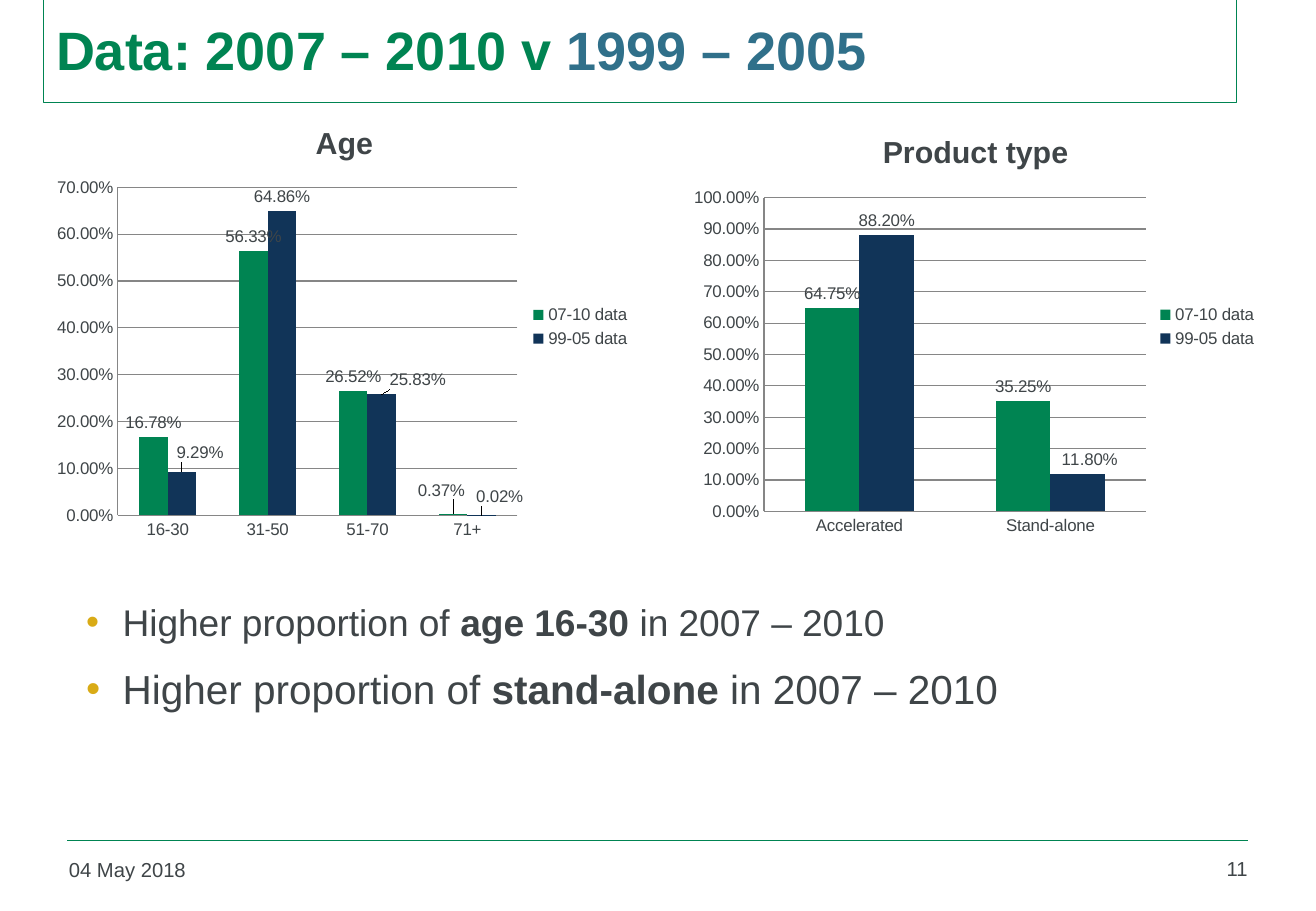
from dataclasses import dataclass

from lxml.etree import SubElement
from pptx import Presentation
from pptx.chart.data import CategoryChartData
from pptx.dml.color import RGBColor
from pptx.enum.chart import XL_CHART_TYPE, XL_LABEL_POSITION, XL_LEGEND_POSITION, XL_TICK_MARK
from pptx.enum.shapes import MSO_CONNECTOR
from pptx.enum.text import MSO_ANCHOR, PP_ALIGN
from pptx.oxml import parse_xml
from pptx.oxml.ns import nsdecls, qn
from pptx.util import Pt


@dataclass(frozen=True)
class Theme:
    face: str = "Arial"
    green: RGBColor = RGBColor(0x00, 0x84, 0x52)
    blue: RGBColor = RGBColor(0x30, 0x70, 0x8A)
    navy: RGBColor = RGBColor(0x11, 0x34, 0x58)
    ink: RGBColor = RGBColor(0x3F, 0x45, 0x48)
    grid: RGBColor = RGBColor(0x86, 0x86, 0x86)
    bullet: str = "D9AB16"
    title: int = 32
    chart_title: int = 18
    chart_text: int = 10
    footer: int = 12


THEME = Theme()
PERCENT = "0.00%"


def set_font(font, size, color, bold=False):
    font.name = THEME.face
    font.size = Pt(size)
    font.color.rgb = color
    font.bold = bold


def manual_layout(**settings):
    """Return a chart layout element, such as x=0.1 or layoutTarget="inner"."""
    children = "".join(f'<c:{tag} val="{value}"/>' for tag, value in settings.items())
    return parse_xml(f'<c:layout {nsdecls("c")}><c:manualLayout>{children}</c:manualLayout></c:layout>')


prs = Presentation()
prs.slide_width, prs.slide_height = Pt(780), Pt(540)
slide = prs.slides.add_slide(prs.slide_layouts[5])
shapes = slide.shapes

# Title
title = shapes.title
title.left, title.top, title.width, title.height = Pt(26), Pt(-2), Pt(707), Pt(62.6)
title.line.color.rgb = THEME.green
title.line.width = Pt(0.75)
title.text_frame.vertical_anchor = MSO_ANCHOR.MIDDLE
heading = title.text_frame.paragraphs[0]
heading.alignment = PP_ALIGN.LEFT
for text, color in (("Data: 2007 – 2010 v", THEME.green), (" 1999 – 2005", THEME.blue)):
    run = heading.add_run()
    run.text = text
    set_font(run.font, THEME.title, color, True)

# Charts: label_shifts maps (series, point) to an offset as a share of the chart size
charts = (
    dict(
        name="Age", box=(27.4, 60.5, 353.5, 266.4), plot=(0.12, 0.19, 0.67, 0.73), top=0.7,
        categories=("16-30", "31-50", "51-70", "71+"),
        recent=(0.1678, 0.5633, 0.2652, 0.0037), earlier=(0.0929, 0.6486, 0.2583, 0.0002),
        label_shifts={(0, 3): (-0.02, -0.02), (1, 0): (0.03, -0.01),
                      (1, 2): (0.06, 0), (1, 3): (0.03, -0.01)},
    ),
    dict(
        name="Product type", box=(404, 66.2, 348.5, 254.9), plot=(0.14, 0.2, 0.65, 0.73), top=1,
        categories=("Accelerated", "Stand-alone"),
        recent=(0.6475, 0.3525), earlier=(0.882, 0.118),
        label_shifts={(1, 1): (0.02, 0)},
    ),
)
for content in charts:
    data = CategoryChartData(number_format=PERCENT)
    data.categories = content["categories"]
    data.add_series("07-10 data", content["recent"])
    data.add_series("99-05 data", content["earlier"])
    chart = shapes.add_chart(XL_CHART_TYPE.COLUMN_CLUSTERED, *map(Pt, content["box"]), data).chart
    set_font(chart.font, THEME.chart_text, THEME.ink)

    chart.has_title = True
    chart.chart_title.include_in_layout = False
    chart_heading = chart.chart_title.text_frame.paragraphs[0]
    chart_heading.text = content["name"]
    set_font(chart_heading.font, THEME.chart_title, THEME.ink, True)
    chart.has_legend = True
    chart.legend.position = XL_LEGEND_POSITION.RIGHT
    chart.legend.include_in_layout = False

    value_axis, category_axis = chart.value_axis, chart.category_axis
    value_axis.minimum_scale, value_axis.maximum_scale = 0, content["top"]
    value_axis.major_unit = 0.1
    value_axis.tick_labels.number_format = PERCENT
    value_axis.tick_labels.number_format_is_linked = False
    for axis in (value_axis, category_axis):
        axis.major_tick_mark = XL_TICK_MARK.NONE
    for line in (value_axis.major_gridlines.format.line, value_axis.format.line, category_axis.format.line):
        line.color.rgb = THEME.grid
        line.width = Pt(0.75)

    columns = chart.plots[0]
    columns.gap_width, columns.overlap = 150, 0
    columns.vary_by_categories = False
    for series, color in zip(columns.series, (THEME.green, THEME.navy)):
        series.format.fill.solid()
        series.format.fill.fore_color.rgb = color
        labels = series.data_labels
        labels.show_value = True
        labels.number_format = PERCENT
        labels.number_format_is_linked = False
        labels.position = XL_LABEL_POSITION.OUTSIDE_END
    for (series_index, point), (dx, dy) in content["label_shifts"].items():
        series = columns.series[series_index]
        series.points[point].data_label.position = XL_LABEL_POSITION.OUTSIDE_END
        index = series._element.find(f'.//{qn("c:dLbl")}/{qn("c:idx")}[@val="{point}"]')
        index.addnext(manual_layout(x=dx, y=dy))

    plot_area = chart._chartSpace.find(f'.//{qn("c:plotArea")}')
    for automatic in plot_area.findall(qn("c:layout")):
        plot_area.remove(automatic)
    x, y, w, h = content["plot"]
    plot_area.insert(0, manual_layout(layoutTarget="inner", xMode="edge", yMode="edge", x=x, y=y, w=w, h=h))

# Findings
findings = shapes.add_textbox(Pt(44), Pt(349.2), Pt(702.7), Pt(85)).text_frame
findings.word_wrap = True
findings.margin_top = Pt(6)
for row, (size, emphasis) in enumerate(((22, "age 16-30"), (24, "stand-alone"))):
    finding = findings.add_paragraph() if row else findings.paragraphs[0]
    properties = finding._p.get_or_add_pPr()
    properties.set("marL", str(Pt(21.6)))
    properties.set("indent", str(Pt(-21.6)))
    SubElement(SubElement(properties, qn("a:buClr")), qn("a:srgbClr"), val=THEME.bullet)
    SubElement(properties, qn("a:buFont"), typeface=THEME.face)
    SubElement(properties, qn("a:buChar"), char="•")
    if row:
        finding.space_before = Pt(12)
    for text in ("Higher proportion of ", emphasis, " in 2007 – 2010"):
        run = finding.add_run()
        run.text = text
        set_font(run.font, size, THEME.ink, text == emphasis)

# Footer
rule = shapes.add_connector(MSO_CONNECTOR.STRAIGHT, Pt(40), Pt(498.3), Pt(740), Pt(498.3))
rule.line.color.rgb = THEME.green
rule.line.width = Pt(1)
SubElement(rule._element.spPr, qn("a:effectLst"))
for text, left, top, width, alignment in (
    ("04 May 2018", 33.8, 504.7, 172, PP_ALIGN.LEFT),
    ("11", 691.2, 504, 55.4, PP_ALIGN.RIGHT),
):
    footer = shapes.add_textbox(Pt(left), Pt(top), Pt(width), Pt(26)).text_frame
    footer.word_wrap = True
    footer.paragraphs[0].text = text
    footer.paragraphs[0].alignment = alignment
    set_font(footer.paragraphs[0].font, THEME.footer, THEME.ink)

prs.save("out.pptx")
